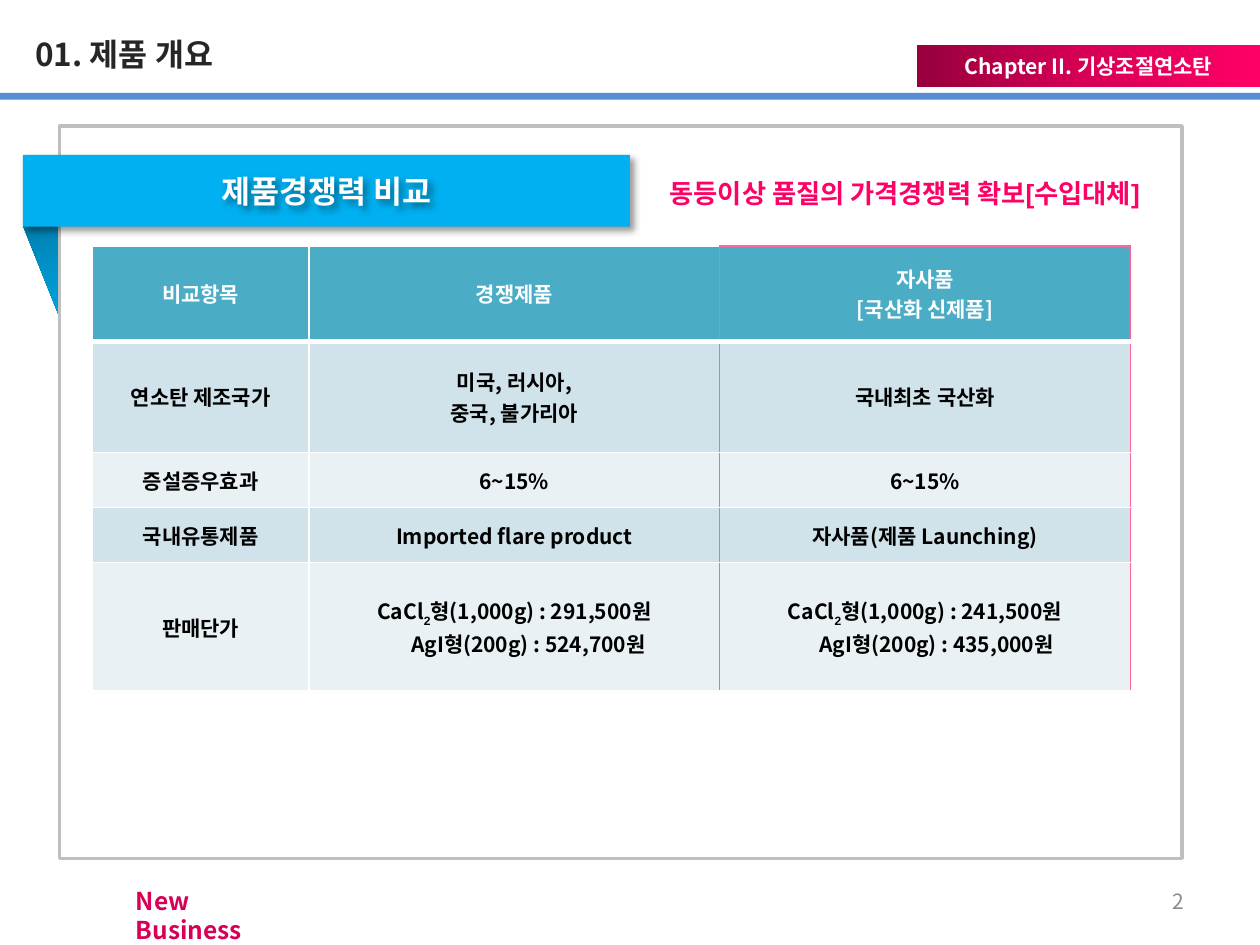
from lxml import etree
from pptx import Presentation
from pptx.dml.color import RGBColor
from pptx.enum import shapes, text
from pptx.oxml import ns
from pptx.util import Pt

FONT = "Noto Sans CJK KR"
COLORS = {
    "white": "FFFFFF", "black": "000000", "title": "262626", "rule": "558ED5",
    "pink": "FF0066", "edge": "FF6699", "frame": "BFBFBF", "banner": "00B0F0",
    "header": "4BACC6", "band": "D0E3EA", "light": "E9F1F5", "number": "8C8C8C",
}
PINK_RAMP = ("97003C", "D70056", "FF0066")
BLUE_RAMP = ("00688E", "0094CA", "00B0F0")
LEFT, CENTER, RIGHT = text.PP_ALIGN.LEFT, text.PP_ALIGN.CENTER, text.PP_ALIGN.RIGHT
TOP, MIDDLE = text.MSO_ANCHOR.TOP, text.MSO_ANCHOR.MIDDLE


def rgb(name):
    return RGBColor.from_string(COLORS[name])


def add_node(parent, tag, **attributes):
    node = etree.SubElement(parent, ns.qn(tag))
    for key, value in attributes.items():
        node.set(key, str(value))
    return node


def set_ramp(fill, parent, ramp):
    """Fill with three evenly spaced gradient stops, left to right."""
    fill.gradient()
    fill.gradient_angle = 0
    stops = parent.find(".//" + ns.qn("a:gsLst"))
    for stop in list(stops):
        stops.remove(stop)
    for index, color in enumerate(ramp):
        stop = add_node(stops, "a:gs", pos=index * 50000)
        add_node(stop, "a:srgbClr", val=color)


def add_shadow(shape):
    shape.shadow.inherit = False
    effects = shape._element.spPr.find(ns.qn("a:effectLst"))
    shadow = add_node(effects, "a:outerShdw", blurRad=Pt(4), dist=Pt(3),
                      dir=45 * 60000, algn="tl", rotWithShape=0)
    add_node(add_node(shadow, "a:srgbClr", val=COLORS["black"]), "a:alpha", val=40000)


def add_span(para, words, size=12, color="black", bold=True, font=FONT,
             subscript=False, ramp=None):
    span = para.add_run()
    span.text = words
    span.font.size, span.font.bold = Pt(size), bold
    properties = span._r.get_or_add_rPr()
    if ramp:
        set_ramp(span.font.fill, properties, ramp)
    else:
        span.font.color.rgb = rgb(color)
    span.font.name = font
    add_node(properties, "a:ea", typeface=FONT)
    if subscript:
        properties.set("baseline", "-25000")


def write(shape, words, align=LEFT, anchor=TOP, **style):
    frame = shape.text_frame
    frame.word_wrap = True
    frame.auto_size = text.MSO_AUTO_SIZE.NONE
    frame.vertical_anchor = anchor
    frame.margin_left = frame.margin_right = Pt(7.2)
    frame.margin_top = frame.margin_bottom = Pt(3.6)
    para = frame.paragraphs[0]
    para.alignment = align
    add_span(para, words, **style)


def add_label(page, box, words, **style):
    label = page.shapes.add_textbox(*map(Pt, box))
    write(label, words, **style)
    return label


def add_block(page, box, fill=None, ramp=None, kind=shapes.MSO_SHAPE.RECTANGLE):
    block = page.shapes.add_shape(kind, *map(Pt, box))
    block.shadow.inherit = False
    block.line.fill.background()
    if ramp:
        set_ramp(block.fill, block._element.spPr, ramp)
    else:
        block.fill.solid()
        block.fill.fore_color.rgb = rgb(fill)
    return block


def add_header(page, box):
    left, top, width, height = box
    title = page.shapes.title
    title.left, title.top, title.width, title.height = map(
        Pt, (left + 13, top + 16.5, 366, 29))
    write(title, "01. 제품 개요", size=18, color="title")
    add_block(page, (left, top + height - 4, width, 4), "rule")
    chapter = add_block(page, (left + width - 196, top + 26, 196, 24), ramp=PINK_RAMP)
    write(chapter, "Chapter II. 기상조절연소탄", align=CENTER, anchor=MIDDLE, color="white")


def add_panel(page, box):
    left, top, width, height = box
    # Folded ribbon end, tucked behind the frame
    fold = add_block(page, (left - 2.2, top + 30.2, 58.3, 79.2), ramp=BLUE_RAMP,
                     kind=shapes.MSO_SHAPE.ISOSCELES_TRIANGLE)
    fold.rotation = 68.2
    frame = add_block(page, box, "white")
    frame.line.color.rgb = rgb("frame")
    frame.line.width = Pt(2)
    # Ribbon with its heading
    ribbon = (left - 21, top + 16.5, 347, 41)
    add_shadow(add_block(page, ribbon, "banner"))
    add_shadow(add_label(page, ribbon, "제품경쟁력 비교", align=CENTER, anchor=MIDDLE,
                         size=18, color="white"))
    add_label(page, (left + 326, top + 26, 314, 25),
              "동등이상 품질의 가격경쟁력 확보[수입대체]",
              align=CENTER, size=15, color="pink", font="Arial")


def price_lines(chloride, iodide, indent):
    """Two price lines; the second is pushed right by an indent."""
    return [(0, [("CaCl", False), ("2", True), (f"형(1,000g) : {chloride}원", False)]),
            (indent, [(f"AgI형(200g) : {iodide}원", False)])]


def plain_lines(*lines):
    return [(0, [(line, False)]) for line in lines]


def set_borders(cell, row, column):
    sides = {
        "L": ("edge" if column == 2 else "white", 1),
        "R": ("edge" if column > 0 else "white", 1),
        "T": ("edge" if (row, column) == (0, 2) else "white", 3 if row == 1 else 1),
        "B": ("white", 3 if row == 0 else 1),
    }
    properties = cell._tc.get_or_add_tcPr()
    for side, (color, width) in sides.items():
        line = add_node(properties, f"a:ln{side}", w=Pt(width))
        add_node(add_node(line, "a:solidFill"), "a:srgbClr", val=COLORS[color])


def add_comparison(page, box):
    rows = [
        [plain_lines("비교항목"), plain_lines("경쟁제품"),
         plain_lines("자사품", "[국산화 신제품]")],
        [plain_lines("연소탄 제조국가"), plain_lines("미국, 러시아,", "중국, 불가리아"),
         plain_lines("국내최초 국산화")],
        [plain_lines("증설증우효과"), plain_lines("6~15%"), plain_lines("6~15%")],
        [plain_lines("국내유통제품"), plain_lines("Imported flare product"),
         plain_lines("자사품(제품 Launching)")],
        [plain_lines("판매단가"), price_lines("291,500", "524,700", 16),
         price_lines("241,500", "435,000", 13)],
    ]
    table = page.shapes.add_table(len(rows), 3, *map(Pt, box)).table
    for column, width in zip(table.columns, (123.8, 234.7, 234.7)):
        column.width = Pt(width)
    for row, height in zip(table.rows, (54.5, 63.5, 31.5, 31.5, 73.5)):
        row.height = Pt(height)
    for r, row in enumerate(rows):
        fill = "header" if r == 0 else ("band" if r % 2 else "light")
        for c, lines in enumerate(row):
            cell = table.cell(r, c)
            cell.vertical_anchor = MIDDLE
            set_borders(cell, r, c)
            cell.fill.solid()
            cell.fill.fore_color.rgb = rgb(fill)
            for index, (indent, parts) in enumerate(lines):
                frame = cell.text_frame
                para = frame.add_paragraph() if index else frame.paragraphs[0]
                para.alignment = CENTER
                if indent:
                    para._p.get_or_add_pPr().set("marL", str(Pt(indent)))
                for words, subscript in parts:
                    add_span(para, words, color="black" if r else "white",
                             font="Arial" if subscript else FONT, subscript=subscript)


def add_footer(page, box):
    left, top, width, height = box
    add_label(page, (left, top + 2, 100, 25), "New Business", size=14, ramp=PINK_RAMP)
    add_label(page, (left + width - 168, top, 168, height), "2", align=RIGHT,
              anchor=MIDDLE, color="number", bold=False)


def main():
    deck = Presentation()
    deck.slide_width, deck.slide_height = Pt(720), Pt(540)
    page = deck.slides.add_slide(deck.slide_layouts[5])
    add_header(page, (0, 0, 720, 57))
    add_panel(page, (34, 72, 641.5, 418.5))
    add_comparison(page, (52.8, 140.5, 593.2, 254.5))
    add_footer(page, (70.5, 500.5, 613.5, 29))
    deck.save("out.pptx")


if __name__ == "__main__":
    main()
